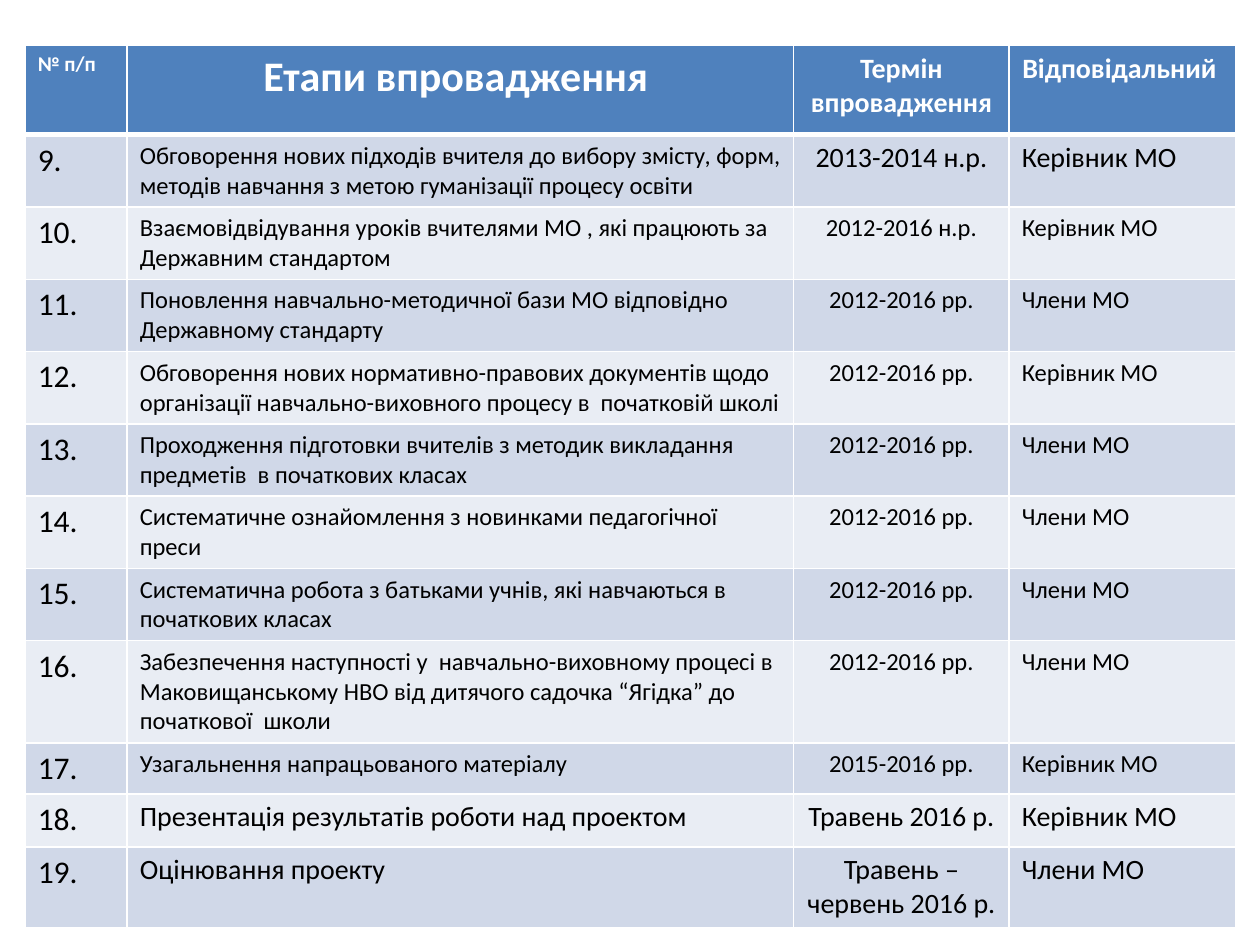
"""Build a slide with the project stages table, items 9 to 19."""
from lxml import etree
from pptx import Presentation, util as u
from pptx.dml.color import RGBColor
from pptx.enum import text
from pptx.oxml.ns import qn


def paint(fill, color):
    fill.solid()
    fill.fore_color.rgb = RGBColor.from_string(color)


def edge(cell, side, width):
    line = etree.SubElement(cell._tc.get_or_add_tcPr(), qn("a:ln" + side), w=str(u.Pt(width)))
    solid = etree.SubElement(line, qn("a:solidFill"))
    etree.SubElement(solid, qn("a:srgbClr"), val="FFFFFF")


HEAD = "Керівник МО"
TEAM = "Члени МО"
YEARS = "2012-2016 рр."
widths = [0.81, 5.29, 1.71, 1.8]
heights = [0.71, 0.55, 0.46, 0.52, 0.5, 0.49, 0.47, 0.46, 0.76, 0.35, 0.42, 0.55]
titles = ["№ п/п", "Етапи впровадження ", "Термін впровадження", "Відповідальний "]
stages = [
    ("Обговорення нових підходів вчителя до вибору змісту, форм, методів навчання "
     "з метою гуманізації процесу освіти", "2013-2014 н.р.", HEAD, 14, 16),
    ("Взаємовідвідування уроків вчителями МО , які працюють за Державним стандартом",
     "2012-2016 н.р.", HEAD, 14, 14),
    ("Поновлення навчально-методичної бази МО відповідно Державному стандарту",
     YEARS, TEAM, 14, 14),
    ("Обговорення нових нормативно-правових документів щодо організації "
     "навчально-виховного процесу в  початковій школі", YEARS, HEAD, 14, 14),
    ("Проходження підготовки вчителів з методик викладання предметів  в початкових класах",
     YEARS, TEAM, 14, 14),
    ("Систематичне ознайомлення з новинками педагогічної преси", YEARS, TEAM, 14, 14),
    ("Систематична робота з батьками учнів, які навчаються в початкових класах",
     YEARS, TEAM, 14, 14),
    ("Забезпечення наступності у  навчально-виховному процесі в Маковищанському НВО "
     "від дитячого садочка “Ягідка” до початкової  школи", YEARS, TEAM, 14, 14),
    ("Узагальнення напрацьованого матеріалу", "2015-2016 рр.", HEAD, 14, 14),
    ("Презентація результатів роботи над проектом", "Травень 2016 р.", HEAD, 16, 16),
    ("Оцінювання проекту", "Травень –червень 2016 р.", TEAM, 16, 16),
]
rows = [(titles, [12, 24, 16, 16])]
for num, (stage, term, who, size, side) in enumerate(stages, 9):
    rows.append(([f"{num}.", stage, term, who], [18, size, side, side]))

deck = Presentation()
deck.slide_width, deck.slide_height = u.Inches(10), u.Inches(7.5)
slide = deck.slides.add_slide(deck.slide_layouts[6])
table = slide.shapes.add_table(
    len(rows), len(widths), u.Inches(0.2), u.Inches(0.36),
    u.Inches(sum(widths)), u.Inches(sum(heights))).table
for col, width in zip(table.columns, widths):
    col.width = u.Inches(width)
for row, height in zip(table.rows, heights):
    row.height = u.Inches(height)

for r, (words, sizes) in enumerate(rows):
    top = r == 0
    shade = "4F81BD" if top else "D0D8E8" if r % 2 else "E9EDF4"
    for c, (word, size) in enumerate(zip(words, sizes)):
        cell = table.cell(r, c)
        for side in "LRTB":
            thick = (top and side == "B") or (r == 1 and side == "T")
            edge(cell, side, 3 if thick else 1)
        paint(cell.fill, shade)
        para = cell.text_frame.paragraphs[0]
        if c == 2 or (top and c > 0):
            para.alignment = text.PP_ALIGN.CENTER
        run = para.add_run()
        run.text = word
        run.font.name = "Calibri"
        run.font.size = u.Pt(size)
        run.font.bold = top
        paint(run.font.fill, "FFFFFF" if top else "000000")

deck.save("out.pptx")
